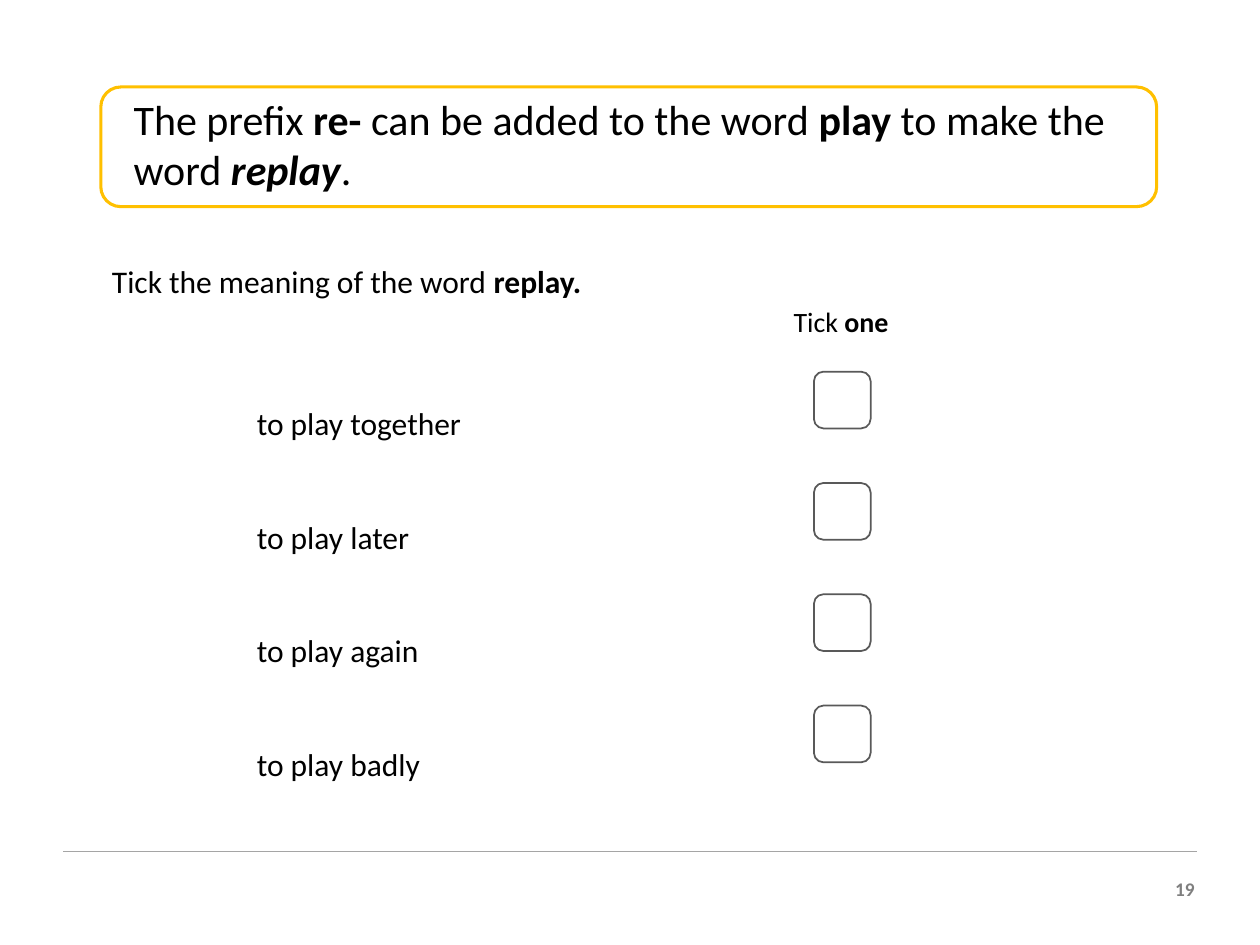
from lxml import etree
from pptx import Presentation
from pptx.dml.color import RGBColor
from pptx.enum.shapes import MSO_CONNECTOR, MSO_SHAPE
from pptx.enum.text import MSO_ANCHOR, MSO_AUTO_SIZE, PP_ALIGN
from pptx.oxml.ns import qn
from pptx.util import Inches, Pt

BLACK = RGBColor(0x00, 0x00, 0x00)
WHITE = RGBColor(0xFF, 0xFF, 0xFF)
GOLD = RGBColor(0xFF, 0xC0, 0x00)
DARK_GREY = RGBColor(0x59, 0x59, 0x59)
MID_GREY = RGBColor(0x7F, 0x7F, 0x7F)
LIGHT_GREY = RGBColor(0xA5, 0xA5, 0xA5)

LEFT, RIGHT = PP_ALIGN.LEFT, PP_ALIGN.RIGHT
TOP = MSO_ANCHOR.TOP
GROW = MSO_AUTO_SIZE.SHAPE_TO_FIT_TEXT
ROUNDED, RECTANGLE = MSO_SHAPE.ROUNDED_RECTANGLE, MSO_SHAPE.RECTANGLE
STRAIGHT = MSO_CONNECTOR.STRAIGHT

FONT = "Calibri"
BOLD = {"bold": True}
BOLD_ITALIC = {"bold": True, "italic": True}
OPTIONS = ["to play together", "to play later", "to play again", "to play badly"]


def set_attributes(target, values):
    """Set each named attribute of the target."""
    for name, value in values.items():
        setattr(target, name, value)


def write_text(shape, paragraphs, size, color=BLACK, align=LEFT, spacing=1.0, wrap=True):
    """Fill a shape with paragraphs, each a list of (text, font values) runs."""
    frame = shape.text_frame
    set_attributes(frame, {
        "word_wrap": wrap, "auto_size": GROW, "vertical_anchor": TOP,
        "margin_left": Inches(0.1), "margin_right": Inches(0.1),
        "margin_top": Inches(0.05), "margin_bottom": Inches(0.05),
    })
    for index, runs in enumerate(paragraphs):
        paragraph = frame.add_paragraph() if index else frame.paragraphs[0]
        set_attributes(paragraph, {"alignment": align, "line_spacing": spacing})
        for text, values in runs:
            run = paragraph.add_run()
            run.text = text
            set_attributes(run.font, {"name": FONT, "size": Pt(size), "bold": False, **values})
            run.font.color.rgb = color


def add_box(slide, kind, box, line_color=None, line_width=1):
    """Add a white shape with an optional outline."""
    shape = slide.shapes.add_shape(kind, *map(Inches, box))
    shape.shadow.inherit = False
    shape.fill.solid()
    shape.fill.fore_color.rgb = WHITE
    if line_color is None:
        shape.line.fill.background()
    else:
        shape.line.color.rgb = line_color
        shape.line.width = Pt(line_width)
    return shape


def add_banner(slide, box):
    """Place the rule about the prefix as the title, over an outlined banner."""
    left, top, width, height = box
    banner = add_box(slide, ROUNDED, box, GOLD, 1.75)
    title = slide.shapes.title
    set_attributes(title, {
        "left": Inches(left + 0.16), "top": Inches(top),
        "width": Inches(width + 0.26), "height": Inches(height - 0.04),
    })
    write_text(title, [[
        ("The prefix ", {}), ("re-", BOLD), (" can be added to the word ", {}),
        ("play", BOLD), (" to make the word ", {}), ("replay", BOLD_ITALIC), (".", {}),
    ]], 24)
    banner.element.addnext(title.element)


def add_question(slide, box):
    """Place the question."""
    question = slide.shapes.add_textbox(*map(Inches, box))
    write_text(question, [[("Tick the meaning of the word ", {}), ("replay.", BOLD)]],
               18, spacing=2.0)


def add_options(slide, box):
    """Place the list of possible meanings."""
    options = slide.shapes.add_textbox(*map(Inches, box))
    write_text(options, [[(option, {})] for option in OPTIONS], 18, spacing=3.0, wrap=False)


def add_tick_column(slide, box):
    """Place the column heading and one evenly spaced tick box for each option."""
    left, top, width, height = box
    side, heading_height, first_offset = 0.45, 0.37, 0.58
    pitch = (height - first_offset - side) / (len(OPTIONS) - 1)
    for index in range(len(OPTIONS)):
        tick_top = top + first_offset + index * pitch
        add_box(slide, ROUNDED, (left + 0.26, tick_top, side, side), DARK_GREY)
    heading = add_box(slide, RECTANGLE, (left, top, width, heading_height))
    write_text(heading, [[("Tick ", {}), ("one", BOLD)]], 16, wrap=False)


def add_footer(slide, box):
    """Place the footer rule and the page number at its right end."""
    left, top, width, height = box
    rule = slide.shapes.add_connector(
        STRAIGHT, Inches(left), Inches(top), Inches(left + width), Inches(top))
    rule.line.color.rgb = LIGHT_GREY
    rule.line.width = Pt(0.75)
    etree.SubElement(rule.element.spPr, qn("a:effectLst"))
    number = slide.shapes.add_textbox(
        Inches(left + width - 0.3), Inches(top + 0.15), Inches(0.38), Inches(height - 0.15))
    write_text(number, [[("19", BOLD)]], 11, MID_GREY, RIGHT)


def main():
    """Build and save the presentation."""
    presentation = Presentation()
    set_attributes(presentation, {"slide_width": Inches(10), "slide_height": Inches(7.5)})
    slide = presentation.slides.add_slide(presentation.slide_layouts[5])
    add_footer(slide, (0.5, 6.76, 9, 0.44))
    add_question(slide, (0.79, 1.73, 8.64, 0.62))
    add_options(slide, (1.94, 2.56, 1.84, 3.58))
    add_tick_column(slide, (6.2, 2.37, 0.96, 3.68))
    add_banner(slide, (0.8, 0.69, 8.38, 0.95))
    presentation.save("out.pptx")


if __name__ == "__main__":
    main()
